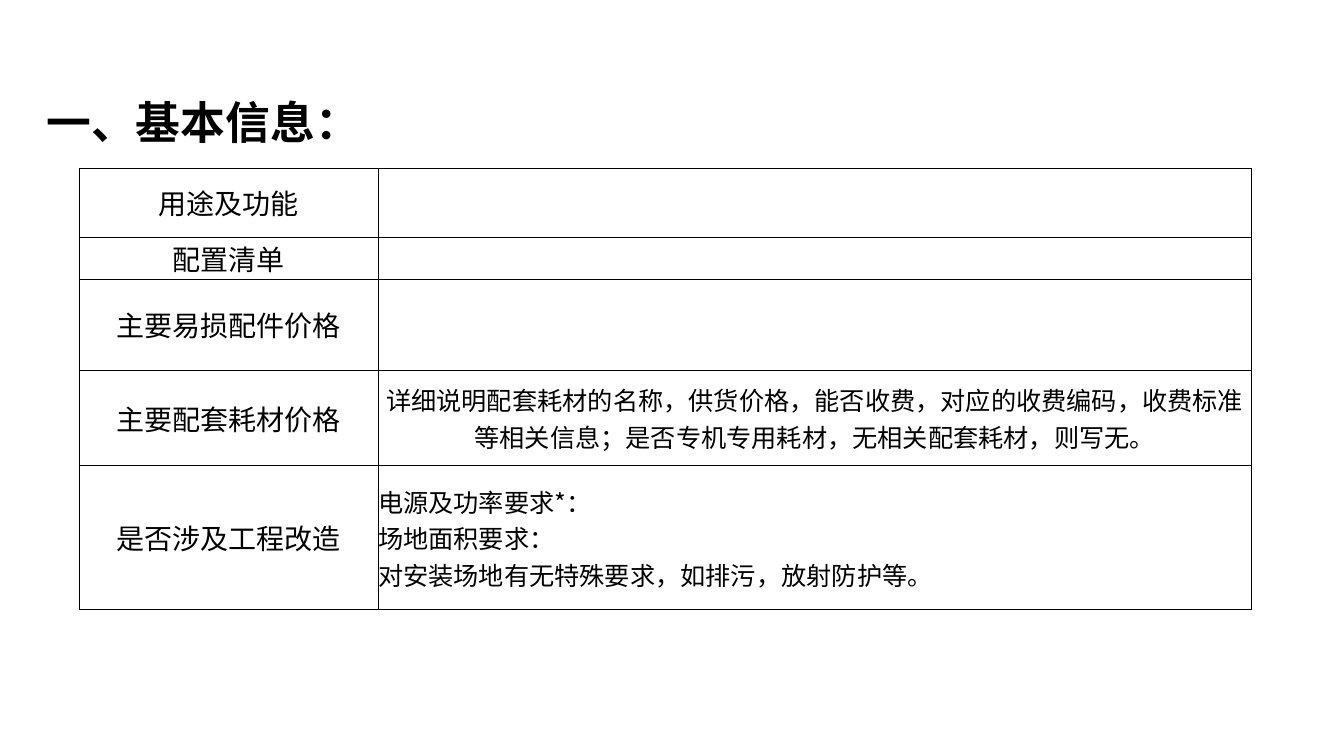
"""Build the basic information slide with its table of equipment details."""
from lxml import etree
from pptx import Presentation
from pptx.dml.color import RGBColor
from pptx.enum.text import MSO_ANCHOR as Anchor, MSO_AUTO_SIZE as AutoSize, PP_ALIGN as Align
from pptx.oxml import parse_xml
from pptx.oxml.ns import nsdecls, qn
from pptx.util import Inches, Pt

COLORS = {"ink": "000000"}
FONT = "Noto Sans CJK SC"
COLUMN_WIDTHS = [2.96, 8.66]
ROWS = [
    (0.68, "用途及功能", [], Align.LEFT),
    (0.42, "配置清单", [], Align.LEFT),
    (0.9, "主要易损配件价格", [], Align.LEFT),
    (0.95, "主要配套耗材价格", [
        "详细说明配套耗材的名称，供货价格，能否收费，对应的收费编码，收费标准"
        "等相关信息；是否专机专用耗材，无相关配套耗材，则写无。",
    ], Align.CENTER),
    (1.43, "是否涉及工程改造", [
        "电源及功率要求*：",
        "场地面积要求：",
        "对安装场地有无特殊要求，如排污，放射防护等。",
    ], Align.LEFT),
]


def write_lines(frame, lines, size, align, bold=False):
    for index, line in enumerate(lines):
        para = frame.paragraphs[0] if index == 0 else frame.add_paragraph()
        para.alignment = align
        span = para.add_run()
        span.text = line
        span.font.name = FONT
        span.font.size = Pt(size)
        span.font.bold = bold
        span.font.color.rgb = RGBColor.from_string(COLORS["ink"])
        east_asian = etree.SubElement(span.font._element, qn("a:ea"))
        east_asian.set("typeface", FONT)


def format_cell(cell, side_margin):
    cell.fill.background()
    cell.vertical_anchor = Anchor.MIDDLE
    cell.margin_left = cell.margin_right = Inches(side_margin)
    cell.margin_top = cell.margin_bottom = 0
    properties = cell._tc.get_or_add_tcPr()
    for position, side in enumerate(["lnL", "lnR", "lnT", "lnB"]):
        border = parse_xml(
            f'<a:{side} {nsdecls("a")} w="{Pt(0.5)}"><a:solidFill>'
            f'<a:srgbClr val="{COLORS["ink"]}"/></a:solidFill></a:{side}>'
        )
        properties.insert(position, border)


deck = Presentation()
deck.slide_width, deck.slide_height = Inches(13.33), Inches(7.5)
page = deck.slides.add_slide(deck.slide_layouts[5])

title = page.shapes.title
title.left, title.top = Inches(0.36), Inches(0.89)
title.width, title.height = Inches(4.33), Inches(0.63)
title.text_frame.auto_size = AutoSize.NONE
title.text_frame.word_wrap = True
title.text_frame.vertical_anchor = Anchor.MIDDLE
write_lines(title.text_frame, ["一、基本信息："], 32, Align.LEFT, bold=True)

table = page.shapes.add_table(
    len(ROWS), len(COLUMN_WIDTHS), Inches(0.79), Inches(1.67), Inches(11.62), Inches(4.37)
).table
table.first_row = False
table.horz_banding = False
for column, width in zip(table.columns, COLUMN_WIDTHS):
    column.width = Inches(width)

for row, (height, label, details, align) in zip(table.rows, ROWS):
    row.height = Inches(height)
    label_cell, detail_cell = row.cells
    format_cell(label_cell, 0.07)
    format_cell(detail_cell, 0)
    write_lines(label_cell.text_frame, [label], 20, Align.CENTER)
    write_lines(detail_cell.text_frame, details, 18, align)

deck.save("out.pptx")
